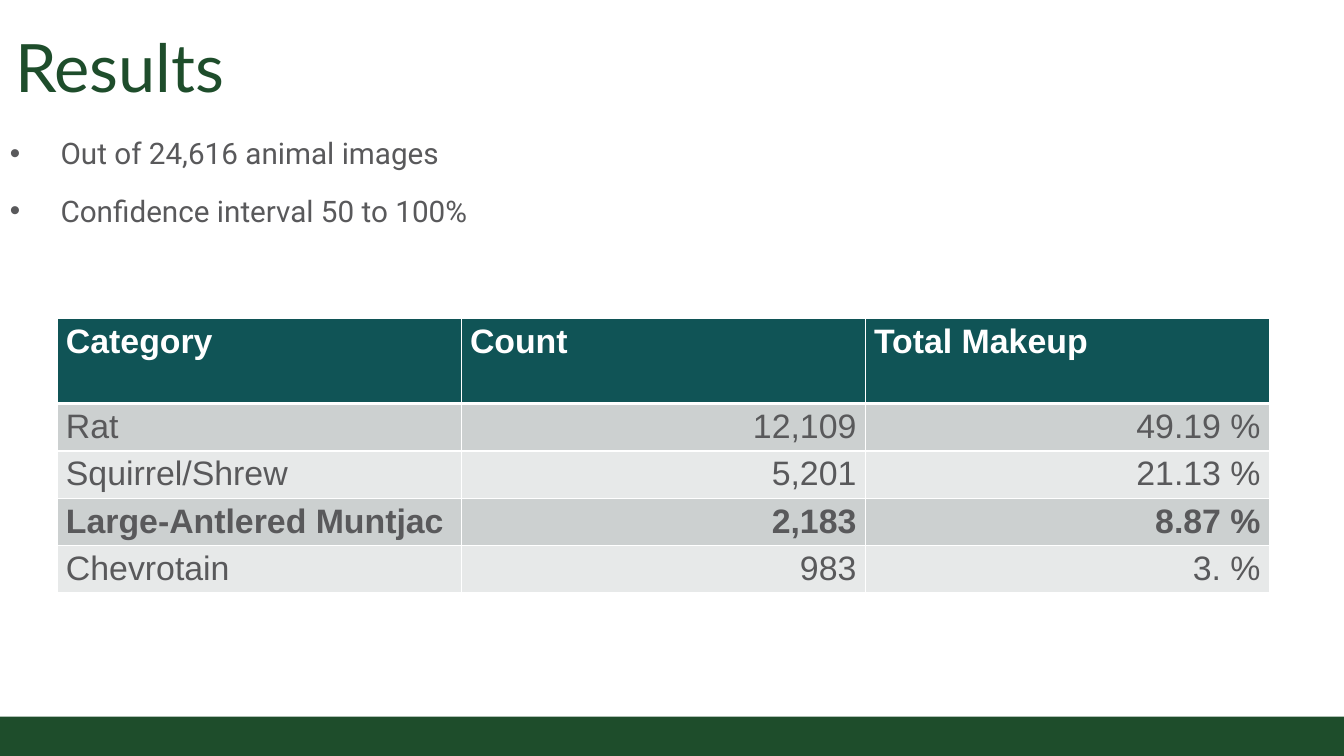
"""Build the results slide with its bullet list and category table."""
from lxml.etree import SubElement
from pptx import Presentation
from pptx.dml.color import RGBColor
from pptx.enum.shapes import MSO_SHAPE
from pptx.enum.text import MSO_ANCHOR, MSO_AUTO_SIZE, PP_ALIGN
from pptx.oxml.ns import qn
from pptx.util import Cm, Pt

GREEN = RGBColor(0x1E, 0x4D, 0x2B)
TEAL = RGBColor(0x10, 0x54, 0x56)
GRAY = RGBColor(0x59, 0x59, 0x5B)
DARK_BAND = RGBColor(0xCC, 0xD0, 0xD0)
LIGHT_BAND = RGBColor(0xE7, 0xE9, 0xE9)
WHITE = RGBColor(0xFF, 0xFF, 0xFF)

BULLETS = ["Out of 24,616 animal images", "Confidence interval 50 to 100%"]
ROWS = [
    ("Category", "Count", "Total Makeup"),
    ("Rat", "12,109", "49.19 %"),
    ("Squirrel/Shrew", "5,201", "21.13 %"),
    ("Large-Antlered Muntjac", "2,183", "8.87 %"),
    ("Chevrotain", "983", "3. %"),
]
BOLD_ROWS = (0, 3)


class ResultsSlide:
    title_font, body_font, table_font = "Lato", "Roboto", "Arial"

    def __init__(self, presentation):
        self.slide = presentation.slides.add_slide(presentation.slide_layouts[1])

    def place(self, shape, left, top, width, height):
        shape.left, shape.top = Cm(left), Cm(top)
        shape.width, shape.height = Cm(width), Cm(height)

    def set_frame(self, frame, anchor, side, edge):
        frame.word_wrap = True
        frame.auto_size = MSO_AUTO_SIZE.NONE
        frame.vertical_anchor = anchor
        frame.margin_left = frame.margin_right = Cm(side)
        frame.margin_top = frame.margin_bottom = Cm(edge)

    def add_run(self, paragraph, text, font, size, color, bold=False):
        run = paragraph.add_run()
        run.text = text
        run.font.name, run.font.size = font, Pt(size)
        run.font.bold = bold
        run.font.color.rgb = color

    def add_bar(self, left, top, width, height):
        bar = self.slide.shapes.add_shape(
            MSO_SHAPE.RECTANGLE, Cm(left), Cm(top), Cm(width), Cm(height))
        bar.shadow.inherit = False
        bar.fill.solid()
        bar.fill.fore_color.rgb = GREEN
        bar.line.fill.background()

    def add_title(self, text, *box):
        title = self.slide.shapes.title
        self.place(title, *box)
        self.set_frame(title.text_frame, MSO_ANCHOR.BOTTOM, 0.25, 0.25)
        paragraph = title.text_frame.paragraphs[0]
        paragraph.alignment = PP_ALIGN.LEFT
        self.add_run(paragraph, text, self.title_font, 54, GREEN)

    def add_bullets(self, items, *box):
        body = self.slide.placeholders[1]
        self.place(body, *box)
        frame = body.text_frame
        self.set_frame(frame, MSO_ANCHOR.TOP, 0.28, 0.15)
        for index, item in enumerate(items):
            paragraph = frame.add_paragraph() if index else frame.paragraphs[0]
            self.add_bullet_mark(paragraph)
            paragraph.line_spacing = 1.2
            paragraph.space_before = Pt(6 if index else 0)
            paragraph.space_after = Pt(6)
            self.add_run(paragraph, item, self.body_font, 24, GRAY)

    def add_bullet_mark(self, paragraph):
        properties = paragraph._p.get_or_add_pPr()
        properties.set("marL", str(Cm(1.45)))
        properties.set("indent", str(-Cm(1.45)))
        color = SubElement(properties, qn("a:buClr"))
        SubElement(color, qn("a:srgbClr"), val=str(GRAY))
        SubElement(properties, qn("a:buFont"), typeface="Arial")
        SubElement(properties, qn("a:buChar"), char="•")

    def add_table(self, rows, left, top, column_width, header_height, row_height):
        columns = len(rows[0])
        table = self.slide.shapes.add_table(
            len(rows), columns, Cm(left), Cm(top), Cm(column_width * columns),
            Cm(header_height + row_height * (len(rows) - 1))).table
        for column in table.columns:
            column.width = Cm(column_width)
        for row_index, values in enumerate(rows):
            is_header = row_index == 0
            table.rows[row_index].height = Cm(header_height if is_header else row_height)
            band = DARK_BAND if row_index % 2 else LIGHT_BAND
            for column_index, value in enumerate(values):
                cell = table.cell(row_index, column_index)
                self.add_borders(cell, top=3 if row_index == 1 else 0.96,
                                 bottom=3 if is_header else 0.96)
                cell.fill.solid()
                cell.fill.fore_color.rgb = TEAL if is_header else band
                paragraph = cell.text_frame.paragraphs[0]
                is_number = column_index > 0 and not is_header
                paragraph.alignment = PP_ALIGN.RIGHT if is_number else PP_ALIGN.LEFT
                self.add_run(paragraph, value, self.table_font, 27.4,
                             WHITE if is_header else GRAY, row_index in BOLD_ROWS)

    def add_borders(self, cell, top, bottom):
        properties = cell._tc.get_or_add_tcPr()
        for side, width in (("L", 0.96), ("R", 0.96), ("T", top), ("B", bottom)):
            line = SubElement(properties, qn(f"a:ln{side}"), w=str(Pt(width)))
            fill = SubElement(line, qn("a:solidFill"))
            SubElement(fill, qn("a:srgbClr"), val=str(WHITE))


def main():
    presentation = Presentation()
    presentation.slide_width, presentation.slide_height = Cm(38.38), Cm(21.59)
    results = ResultsSlide(presentation)
    results.add_bar(0, 20.47, 38.38, 1.12)
    results.add_table(ROWS, 1.63, 9.09, 11.54, 2.44, 1.35)
    results.add_title("Results", 0.18, 0.48, 34.9, 2.79)
    results.add_bullets(BULLETS, 0, 3.51, 34.9, 7.59)
    presentation.save("out.pptx")


if __name__ == "__main__":
    main()
